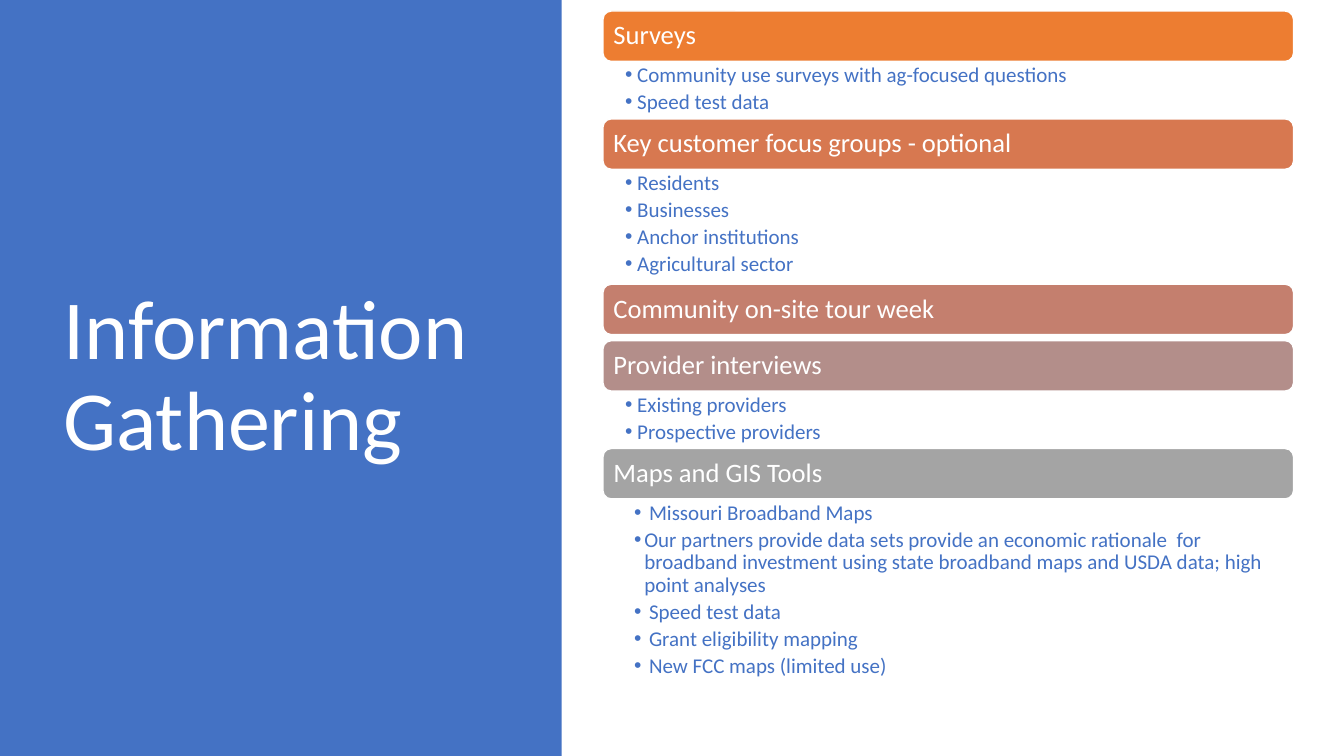
from dataclasses import dataclass

from lxml.etree import SubElement
from pptx import Presentation
from pptx.dml.color import RGBColor
from pptx.enum.shapes import MSO_SHAPE
from pptx.enum.text import MSO_ANCHOR, MSO_AUTO_SIZE, PP_ALIGN
from pptx.oxml.ns import qn
from pptx.util import Inches, Pt

# Content
TITLE = "Information Gathering"
NEAR, FAR = (0.12, -0.12), (0.19, -0.10)  # left margin and hanging indent
SECTIONS = [
    ("Surveys", "ED7D31", NEAR, [
        "Community use surveys with ag-focused questions",
        "Speed test data",
    ]),
    ("Key customer focus groups - optional", "D77850", NEAR, [
        "Residents",
        "Businesses",
        "Anchor institutions",
        "Agricultural sector",
    ]),
    ("Community on-site tour week", "C47F6E", NEAR, []),
    ("Provider interviews", "B38E8A", NEAR, [
        "Existing providers",
        "Prospective providers",
    ]),
    ("Maps and GIS Tools", "A4A4A4", FAR, [
        " Missouri Broadband Maps",
        "Our partners provide data sets provide an economic rationale  for "
        "broadband investment using state broadband maps and USDA data; "
        "high point analyses",
        " Speed test data",
        " Grant eligibility mapping",
        " New FCC maps (limited use)",
    ]),
]


@dataclass(frozen=True)
class Theme:
    font: str = "Calibri"
    blue: str = "4472C4"
    white: str = "FFFFFF"
    title: int = 60
    head: int = 19
    item: int = 15


THEME = Theme()

# Layout in inches
LEFT, TOP, WIDTH = 5.98, 0.11, 6.85
BAR, ROW, GAP = 0.5, 0.285, 0.06


def paint(shape, color):
    shape.shadow.inherit = False
    shape.fill.solid()
    shape.fill.fore_color.rgb = RGBColor.from_string(color)


def style(para, size, color):
    para.alignment = PP_ALIGN.LEFT
    para.line_spacing = 0.9
    for run in para.runs:
        run.font.name = THEME.font
        run.font.size = Pt(size)
        run.font.color.rgb = RGBColor.from_string(color)


def inset(frame, left, top, right, bottom):
    frame.word_wrap = True
    frame.auto_size = MSO_AUTO_SIZE.NONE
    frame.margin_left, frame.margin_top = Inches(left), Inches(top)
    frame.margin_right, frame.margin_bottom = Inches(right), Inches(bottom)


def bullet(para, indent):
    props = para._p.get_or_add_pPr()
    props.set("marL", str(Inches(indent[0])))
    props.set("indent", str(Inches(indent[1])))
    color = SubElement(props, qn("a:buClr"))
    SubElement(color, qn("a:srgbClr")).set("val", THEME.blue)
    SubElement(props, qn("a:buFont")).set("typeface", "Arial")
    SubElement(props, qn("a:buChar")).set("char", "•")


def add_title(slide):
    # Blue panel behind the title
    panel = slide.shapes.add_shape(
        MSO_SHAPE.RECTANGLE, 0, 0, Inches(5.57), Inches(7.5))
    paint(panel, THEME.blue)
    panel.line.fill.background()
    title = slide.shapes.title
    title.element.addprevious(panel.element)

    title.left, title.top = Inches(0.53), Inches(0.74)
    title.width, title.height = Inches(4.5), Inches(6.02)
    frame = title.text_frame
    frame.text = TITLE
    frame.vertical_anchor = MSO_ANCHOR.MIDDLE
    inset(frame, 0.1, 0.05, 0.1, 0.05)
    style(frame.paragraphs[0], THEME.title, THEME.white)


def add_bar(slide, top, text, color):
    bar = slide.shapes.add_shape(
        MSO_SHAPE.ROUNDED_RECTANGLE,
        Inches(LEFT), Inches(top), Inches(WIDTH), Inches(BAR))
    paint(bar, color)
    bar.line.color.rgb = RGBColor.from_string(THEME.white)
    bar.line.width = Pt(1)
    frame = bar.text_frame
    frame.text = text
    frame.vertical_anchor = MSO_ANCHOR.MIDDLE
    inset(frame, 0.08, 0.08, 0.08, 0.08)
    style(frame.paragraphs[0], THEME.head, THEME.white)


def add_list(slide, top, height, items, indent):
    box = slide.shapes.add_textbox(
        Inches(LEFT), Inches(top), Inches(WIDTH), Inches(height))
    frame = box.text_frame
    frame.text = "\n".join(items)
    inset(frame, 0.22, 0.03, 0.15, 0.03)
    for num, para in enumerate(frame.paragraphs):
        para.level = 1
        para.space_before = Pt(3 if num else 0)
        style(para, THEME.item, THEME.blue)
        bullet(para, indent)


def main():
    deck = Presentation()
    deck.slide_width, deck.slide_height = Inches(13.33), Inches(7.5)
    slide = deck.slides.add_slide(deck.slide_layouts[5])
    add_title(slide)

    # Stack of headed lists
    top = TOP
    for head, color, indent, items in SECTIONS:
        add_bar(slide, top, head, color)
        top += BAR
        height = ROW * len(items) or GAP
        if items:
            add_list(slide, top, height, items, indent)
        top += height

    deck.save("out.pptx")


if __name__ == "__main__":
    main()
